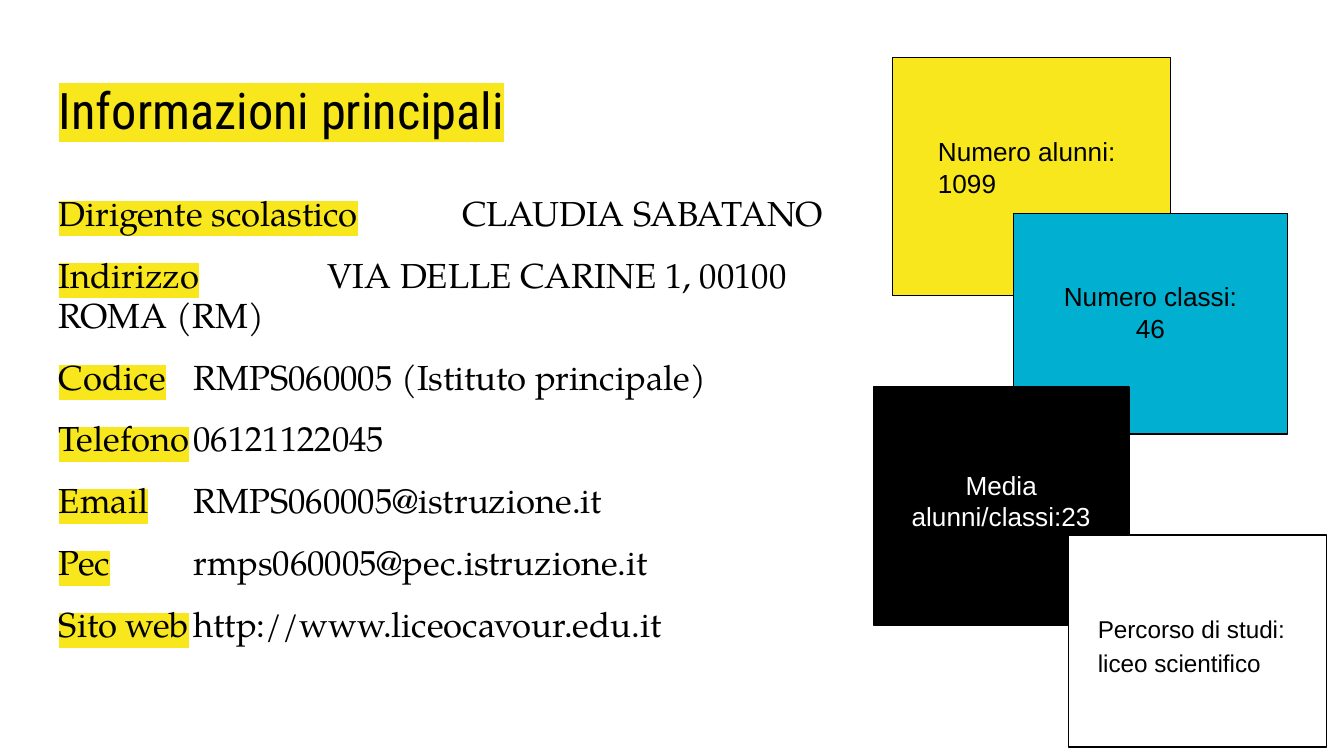
import pptx
import pptx.dml.color
import pptx.enum.shapes
import pptx.enum.text
import pptx.oxml
import pptx.oxml.ns
import pptx.util
from pptx.util import Inches

RGBColor = pptx.dml.color.RGBColor
YELLOW = RGBColor(0xF8, 0xE7, 0x1C)
CYAN = RGBColor(0x01, 0xAF, 0xD1)
BLACK = RGBColor(0, 0, 0)
WHITE = RGBColor(255, 255, 255)

LEFT = pptx.enum.text.PP_ALIGN.LEFT
CENTER = pptx.enum.text.PP_ALIGN.CENTER

DETAILS = [
    ("Dirigente scolastico", "CLAUDIA SABATANO"),
    ("Indirizzo", "VIA DELLE CARINE 1, 00100 ROMA (RM)"),
    ("Codice", "RMPS060005 (Istituto principale)"),
    ("Telefono", "06121122045"),
    ("Email", "RMPS060005@istruzione.it"),
    ("Pec", "rmps060005@pec.istruzione.it"),
    ("Sito web", "http://www.liceocavour.edu.it"),
]

# Overlapping cards, from back to front: left, top, width, height, fill
CARDS = [
    (6.64, 0.43, 2.07, 1.77, YELLOW),
    (7.54, 1.59, 2.04, 1.64, CYAN),
    (6.5, 2.88, 1.9, 1.77, BLACK),
    (7.95, 3.98, 1.92, 1.58, WHITE),
]

# Card captions: left, top, width, lines, format
CAPTIONS = [
    (6.88, 0.91, 1.68, ["Numero alunni:\t1099"], {}),
    (7.72, 1.99, 1.68, ["Numero classi:", "46"], {"align": CENTER}),
    (6.67, 3.39, 1.56, ["Media", "alunni/classi:23"],
     {"align": CENTER, "color": WHITE}),
    (8.07, 4.44, 1.68, ["Percorso di studi: liceo scientifico"],
     {"size": 13, "line_spacing": 1.15, "space_after": 6}),
]


def add_run(paragraph, text, *, font, size, color=BLACK, highlight=None):
    run = paragraph.add_run()
    run.text = text
    run.font.name = font
    run.font.size = pptx.util.Pt(size)
    run.font.color.rgb = color
    if highlight is not None:
        # The highlight must directly follow the text fill
        element = pptx.oxml.parse_xml(
            f'<a:highlight {pptx.oxml.ns.nsdecls("a")}>'
            f'<a:srgbClr val="{highlight}"/></a:highlight>')
        fill = run.font._element.find(pptx.oxml.ns.qn("a:solidFill"))
        fill.addnext(element)


def add_tabs(paragraph, positions):
    stops = "".join(f'<a:tab pos="{Inches(position)}" algn="l"/>'
                    for position in positions)
    paragraph._p.get_or_add_pPr().append(pptx.oxml.parse_xml(
        f'<a:tabLst {pptx.oxml.ns.nsdecls("a")}>{stops}</a:tabLst>'))


def add_text(slide, left, top, width, height, paragraphs, *, font="Arial",
             size=14, color=BLACK, align=LEFT, line_spacing=None,
             space_before=0, space_after=0, tabs=(), grow=False):
    """Each paragraph is a list of (text, highlight) pairs."""
    shape = slide.shapes.add_textbox(
        Inches(left), Inches(top), Inches(width), Inches(height))
    frame = shape.text_frame
    frame.word_wrap = True
    if grow:
        frame.auto_size = pptx.enum.text.MSO_AUTO_SIZE.SHAPE_TO_FIT_TEXT
    frame.margin_left = frame.margin_right = Inches(0.1)
    frame.margin_top = frame.margin_bottom = Inches(0.1)
    for index, runs in enumerate(paragraphs):
        paragraph = frame.add_paragraph() if index else frame.paragraphs[0]
        paragraph.alignment = align
        paragraph.line_spacing = line_spacing
        paragraph.space_before = pptx.util.Pt(space_before if index else 0)
        paragraph.space_after = pptx.util.Pt(space_after)
        if tabs:
            add_tabs(paragraph, tabs)
        for text, highlight in runs:
            add_run(paragraph, text, font=font, size=size, color=color,
                    highlight=highlight)


def add_card(slide, left, top, width, height, fill):
    shape = slide.shapes.add_shape(
        pptx.enum.shapes.MSO_SHAPE.RECTANGLE,
        Inches(left), Inches(top), Inches(width), Inches(height))
    shape.shadow.inherit = False
    shape.fill.solid()
    shape.fill.fore_color.rgb = fill
    shape.line.color.rgb = BLACK
    shape.line.width = pptx.util.Pt(0.75)


def main():
    # Widescreen slide, 16:9
    presentation = pptx.Presentation()
    presentation.slide_width = Inches(10)
    presentation.slide_height = Inches(10 * 9 / 16)
    slide = presentation.slides.add_slide(presentation.slide_layouts[6])

    # Title
    add_text(slide, 0.34, 0.49, 9.32, 0.63,
             [[("Informazioni principali", YELLOW)]],
             font="Roboto Condensed", size=27)

    # School details, with values on one-inch tab stops
    add_text(slide, 0.34, 1.35, 6.16, 3.65,
             [[(label, YELLOW), ("\t" + value, None)]
              for label, value in DETAILS],
             font="TeX Gyre Pagella", size=18.6,
             line_spacing=0.95, space_before=12, tabs=(1, 2, 3))

    # Cards, then their captions on top
    for card in CARDS:
        add_card(slide, *card)
    for left, top, width, lines, text_format in CAPTIONS:
        add_text(slide, left, top, width, 0.67,
                 [[(line, None)] for line in lines], grow=True, **text_format)

    presentation.save("out.pptx")


if __name__ == "__main__":
    main()
